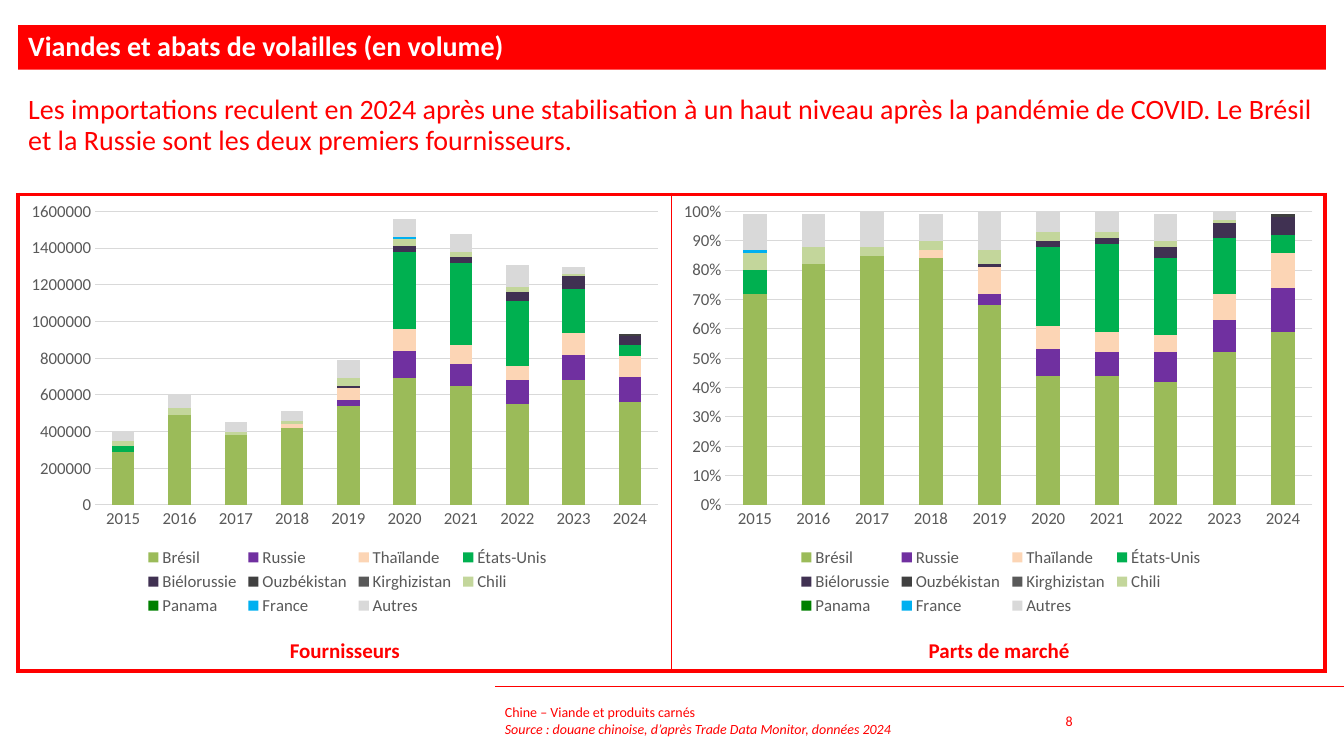
"""Build the slide on poultry meat and offal imports by volume."""
from lxml import etree
from pptx import Presentation
from pptx.chart.data import CategoryChartData
from pptx.dml.color import RGBColor
from pptx.enum import chart as ch, shapes, text
from pptx.oxml import parse_xml
from pptx.oxml.ns import nsdecls, qn
from pptx.util import Inches, Pt

RED = RGBColor(0xFF, 0x00, 0x00)
WHITE = RGBColor(0xFF, 0xFF, 0xFF)
GREY = RGBColor(0x59, 0x59, 0x59)
LIGHT_GREY = RGBColor(0xD9, 0xD9, 0xD9)
FONT = "Calibri"


def write_lines(frame, lines, alignment, anchor, **formats):
    frame.word_wrap = True
    frame.auto_size = text.MSO_AUTO_SIZE.NONE
    frame.vertical_anchor = anchor
    for index, line in enumerate(lines):
        paragraph = frame.paragraphs[0] if index == 0 else frame.add_paragraph()
        paragraph.alignment = alignment
        run = paragraph.add_run()
        run.text = line
        run.font.name = FONT
        run.font.color.rgb = formats["color"]
        for name, value in formats.items():
            if name != "color":
                setattr(run.font, name, value)


def set_layout(parent, after, inner, **fractions):
    for old in parent.findall(qn("c:layout")):
        parent.remove(old)
    layout = etree.Element(qn("c:layout"))
    manual = etree.SubElement(layout, qn("c:manualLayout"))
    if inner:
        etree.SubElement(manual, qn("c:layoutTarget"), val="inner")
    for mode in ("xMode", "yMode"):
        etree.SubElement(manual, qn(f"c:{mode}"), val="edge")
    for name, value in fractions.items():
        etree.SubElement(manual, qn(f"c:{name}"), val=str(value))
    if after is None:
        parent.insert(0, layout)
    else:
        after.addnext(layout)


presentation = Presentation()
presentation.slide_width = Inches(13.33)
presentation.slide_height = Inches(7.5)
slide = presentation.slides.add_slide(presentation.slide_layouts[1])

title, message = slide.placeholders
title.fill.solid()
title.fill.fore_color.rgb = RED
headings = [
    (title, 0.25, 0.44, text.MSO_ANCHOR.MIDDLE, WHITE, True,
     "Viandes et abats de volailles (en volume)"),
    (message, 0.9, 0.81, text.MSO_ANCHOR.TOP, RED, False,
     "Les importations reculent en 2024 après une stabilisation à un haut niveau après "
     "la pandémie de COVID. Le Brésil et la Russie sont les deux premiers fournisseurs."),
]
for shape, top, height, anchor, color, bold, words in headings:
    shape.left, shape.top = Inches(0.18), Inches(top)
    shape.width, shape.height = Inches(12.97), Inches(height)
    write_lines(shape.text_frame, [words], text.PP_ALIGN.LEFT, anchor,
                size=Pt(20), color=color, bold=bold)
    paragraph = shape.text_frame.paragraphs[0]
    paragraph.line_spacing = 0.9
    paragraph.space_before = Pt(0)
properties = message.text_frame.paragraphs[0]._p.get_or_add_pPr()
properties.set("marL", "0")
properties.set("indent", "0")
etree.SubElement(properties, qn("a:buNone"))

rule = slide.shapes.add_connector(shapes.MSO_CONNECTOR.STRAIGHT, Inches(13.33),
                                  Inches(6.81), Inches(4.91), Inches(6.81))
rule.line.color.rgb = RED
rule.line.width = Pt(0.5)
etree.SubElement(rule._element.spPr, qn("a:effectLst"))

table = slide.shapes.add_table(1, 2, Inches(0.18), Inches(1.93),
                               Inches(12.96), Inches(4.73)).table
table.first_row = table.horz_banding = False
border_widths = [{"lnL": 3, "lnR": 1, "lnT": 3, "lnB": 3},
                 {"lnL": 1, "lnR": 3, "lnT": 3, "lnB": 3}]
for cell, widths in zip(table.rows[0].cells, border_widths):
    cell.fill.background()
    for index, (side, width) in enumerate(widths.items()):
        cell._tc.get_or_add_tcPr().insert(index, parse_xml(
            f'<a:{side} {nsdecls("a")} w="{Pt(width)}"><a:solidFill>'
            f'<a:srgbClr val="{RED}"/></a:solidFill></a:{side}>'))

labels = [
    (0.18, 6.27, 6.48, 0.35, ["Fournisseurs"], text.PP_ALIGN.CENTER, 15, True),
    (6.67, 6.27, 6.48, 0.35, ["Parts de marché"], text.PP_ALIGN.CENTER, 15, True),
    (4.91, 6.95, 5.43, 0.4,
     ["Chine – Viande et produits carnés",
      "Source : douane chinoise, d’après Trade Data Monitor, données 2024"],
     text.PP_ALIGN.LEFT, 10, False),
    (10.47, 6.95, 0.99, 0.4, ["8"], text.PP_ALIGN.LEFT, 10, False),
]
for left, top, width, height, lines, alignment, size, bold in labels:
    box = slide.shapes.add_textbox(Inches(left), Inches(top), Inches(width), Inches(height))
    write_lines(box.text_frame, lines, alignment, text.MSO_ANCHOR.MIDDLE,
                size=Pt(size), color=RED, bold=bold)
    for paragraph in box.text_frame.paragraphs[1:]:
        paragraph.runs[0].font.italic = True

years = [str(year) for year in range(2015, 2025)]
none = [0] * 10
suppliers = [
    ("Brésil", "9BBB59", [29, 49, 38, 42, 54, 69, 65, 55, 68, 56],
     [72, 82, 85, 84, 68, 44, 44, 42, 52, 59]),
    ("Russie", "7030A0", [0, 0, 0, 0, 3, 15, 12, 13, 14, 14],
     [0, 0, 0, 0, 4, 9, 8, 10, 11, 15]),
    ("Thaïlande", "FCD5B5", [0, 0, 0, 2, 7, 12, 10, 8, 12, 11],
     [0, 0, 0, 3, 9, 8, 7, 6, 9, 12]),
    ("États-Unis", "00B050", [3, 0, 0, 0, 0, 42, 45, 35, 24, 6],
     [8, 0, 0, 0, 0, 27, 30, 26, 19, 6]),
    ("Biélorussie", "403152", [0, 0, 0, 0, 1, 3, 3, 5, 7, 5],
     [0, 0, 0, 0, 1, 2, 2, 4, 5, 6]),
    ("Ouzbékistan", "404040", [0] * 9 + [1], [0] * 9 + [1]),
    ("Kirghizistan", "595959", none, none),
    ("Chili", "C3D69B", [3, 4, 2, 2, 4, 4, 3, 3, 1, 0],
     [6, 6, 3, 3, 5, 3, 2, 2, 1, 0]),
    ("Panama", "008000", none, none),
    ("France", "00B0F0", [0, 0, 0, 0, 0, 1, 0, 0, 0, 0], [1] + [0] * 9),
    ("Autres", "D9D9D9", [5, 7, 5, 5, 10, 10, 10, 12, 4, 0],
     [12, 11, 12, 9, 13, 7, 7, 9, 3, 0]),
]
charts = [
    (0.18, 6.47, 2, 1600000, 200000, "General", 0.118, 0.863),
    (6.65, 6.49, 3, 1, 0.1, "0%", 0.084, 0.897),
]
for left, width, column, maximum, step, number_format, plot_left, plot_width in charts:
    data = CategoryChartData(number_format=number_format)
    data.categories = years
    for supplier in suppliers:
        values = [value * 10000 if column == 2 else value / 100 for value in supplier[column]]
        data.add_series(supplier[0], values)
    chart = slide.shapes.add_chart(ch.XL_CHART_TYPE.COLUMN_STACKED, Inches(left), Inches(1.93),
                                   Inches(width), Inches(4.22), data).chart
    chart.has_title = False
    chart.font.name = FONT
    chart.font.size = Pt(12)
    chart.font.color.rgb = GREY
    plot = chart.plots[0]
    plot.gap_width, plot.overlap, plot.vary_by_categories = 150, 100, False
    for series, supplier in zip(plot.series, suppliers):
        series.format.fill.solid()
        series.format.fill.fore_color.rgb = RGBColor.from_string(supplier[1])
    category_axis, value_axis = chart.category_axis, chart.value_axis
    for axis in (category_axis, value_axis):
        axis.major_tick_mark = axis.minor_tick_mark = ch.XL_TICK_MARK.NONE
    value_axis.minimum_scale, value_axis.maximum_scale = 0, maximum
    value_axis.major_unit = step
    value_axis.tick_labels.number_format = number_format
    value_axis.tick_labels.number_format_is_linked = False
    value_axis.format.line.fill.background()
    for line in (category_axis.format.line, value_axis.major_gridlines.format.line):
        line.color.rgb = LIGHT_GREY
        line.width = Pt(0.75)
    chart.has_legend = True
    legend = chart.legend
    legend.position = ch.XL_LEGEND_POSITION.BOTTOM
    legend.include_in_layout = False
    set_layout(chart._chartSpace.chart.plotArea, None, True,
               x=plot_left, y=0.04, w=plot_width, h=0.69)
    set_layout(legend._element, legend._element.find(qn("c:legendPos")), False,
               x=0.19, y=0.82, w=0.63, h=0.18)

presentation.save("out.pptx")
